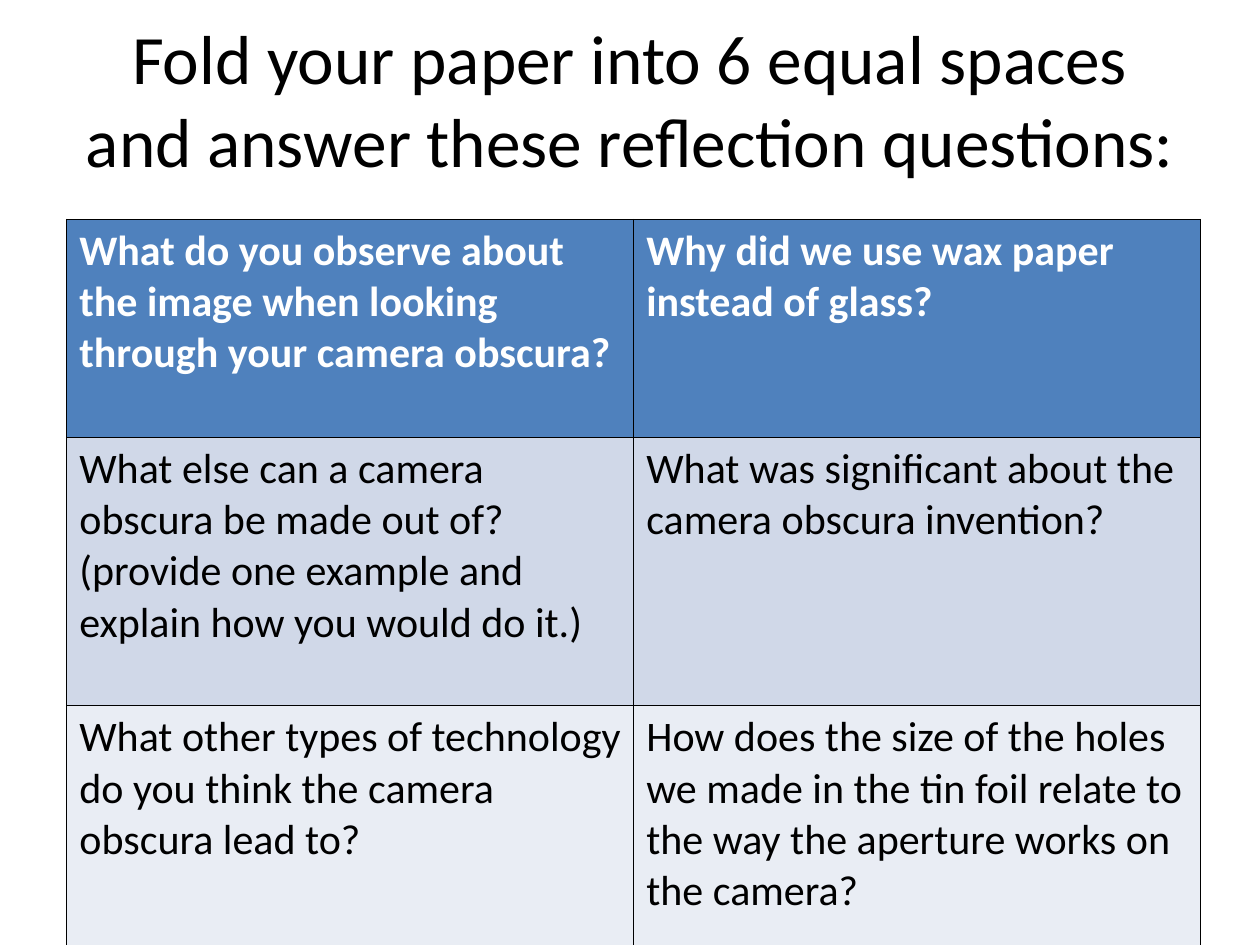
from lxml import etree
from pptx import Presentation
from pptx.dml.color import RGBColor
from pptx.enum.text import MSO_ANCHOR, MSO_AUTO_SIZE, PP_ALIGN
from pptx.oxml.ns import qn
from pptx.util import Inches, Pt

MIDDLE = MSO_ANCHOR.MIDDLE
CENTER = PP_ALIGN.CENTER
NO_FIT = MSO_AUTO_SIZE.NONE
FONT = "Calibri"
TITLE_ONLY = 5

TITLE = "Fold your paper into 6 equal spaces and answer these reflection questions:"
QUESTIONS = [
    ("What do you observe about the image when looking through your camera obscura?",
     "Why did we use wax paper instead of glass?"),
    ("What else can a camera obscura be made out of?  (provide one example and "
     "explain how you would do it.)",
     "What was significant about the camera obscura invention?"),
    ("What other types of technology do you think the camera obscura lead to?",
     "How does the size of the holes we made in the tin foil relate to the way "
     "the aperture works on the camera?"),
]
# Height, fill, text colour and weight of each row
ROW_STYLES = [
    (1.73, "4F81BD", "FFFFFF", True),
    (2.13, "D0D8E8", "000000", False),
    (1.9, "E9EDF4", "000000", False),
]
COL_WIDTH = 4.5


def rgb(value):
    return RGBColor.from_string(value)


def style_text(p, size, color, bold=False):
    p.font.name = FONT
    p.font.size = Pt(size)
    p.font.bold = bold
    p.font.color.rgb = rgb(color)


def set_borders(cell, color="000000", width=0.5):
    tcPr = cell._tc.get_or_add_tcPr()
    for i, side in enumerate(("lnL", "lnR", "lnT", "lnB")):
        ln = etree.Element(qn(f"a:{side}"), w=str(Pt(width)))
        fill = etree.SubElement(ln, qn("a:solidFill"))
        etree.SubElement(fill, qn("a:srgbClr"), val=color)
        tcPr.insert(i, ln)  # borders come before the cell fill


def add_title(s):
    title = s.shapes.title
    title.left, title.top = Inches(0.5), Inches(0.42)
    title.width, title.height = Inches(9), Inches(0.72)
    tf = title.text_frame
    tf.text = TITLE
    tf.word_wrap = True
    tf.auto_size = NO_FIT
    tf.vertical_anchor = MIDDLE
    p = tf.paragraphs[0]
    p.alignment = CENTER
    style_text(p, 39.6, "000000")


def add_question_table(s):
    rows, cols = len(QUESTIONS), len(QUESTIONS[0])
    height = sum(style[0] for style in ROW_STYLES)
    table = s.shapes.add_table(rows, cols, Inches(0.53), Inches(1.74),
                               Inches(cols * COL_WIDTH), Inches(height)).table
    for r, (questions, style) in enumerate(zip(QUESTIONS, ROW_STYLES)):
        row_height, fill, color, bold = style
        table.rows[r].height = Inches(row_height)
        for c, question in enumerate(questions):
            cell = table.cell(r, c)
            cell.text = question
            cell.fill.solid()
            cell.fill.fore_color.rgb = rgb(fill)
            set_borders(cell)
            style_text(cell.text_frame.paragraphs[0], 24, color, bold)


def main():
    prs = Presentation()
    prs.slide_width, prs.slide_height = Inches(10), Inches(7.5)
    s = prs.slides.add_slide(prs.slide_layouts[TITLE_ONLY])
    add_title(s)
    add_question_table(s)
    prs.save("out.pptx")


if __name__ == "__main__":
    main()
